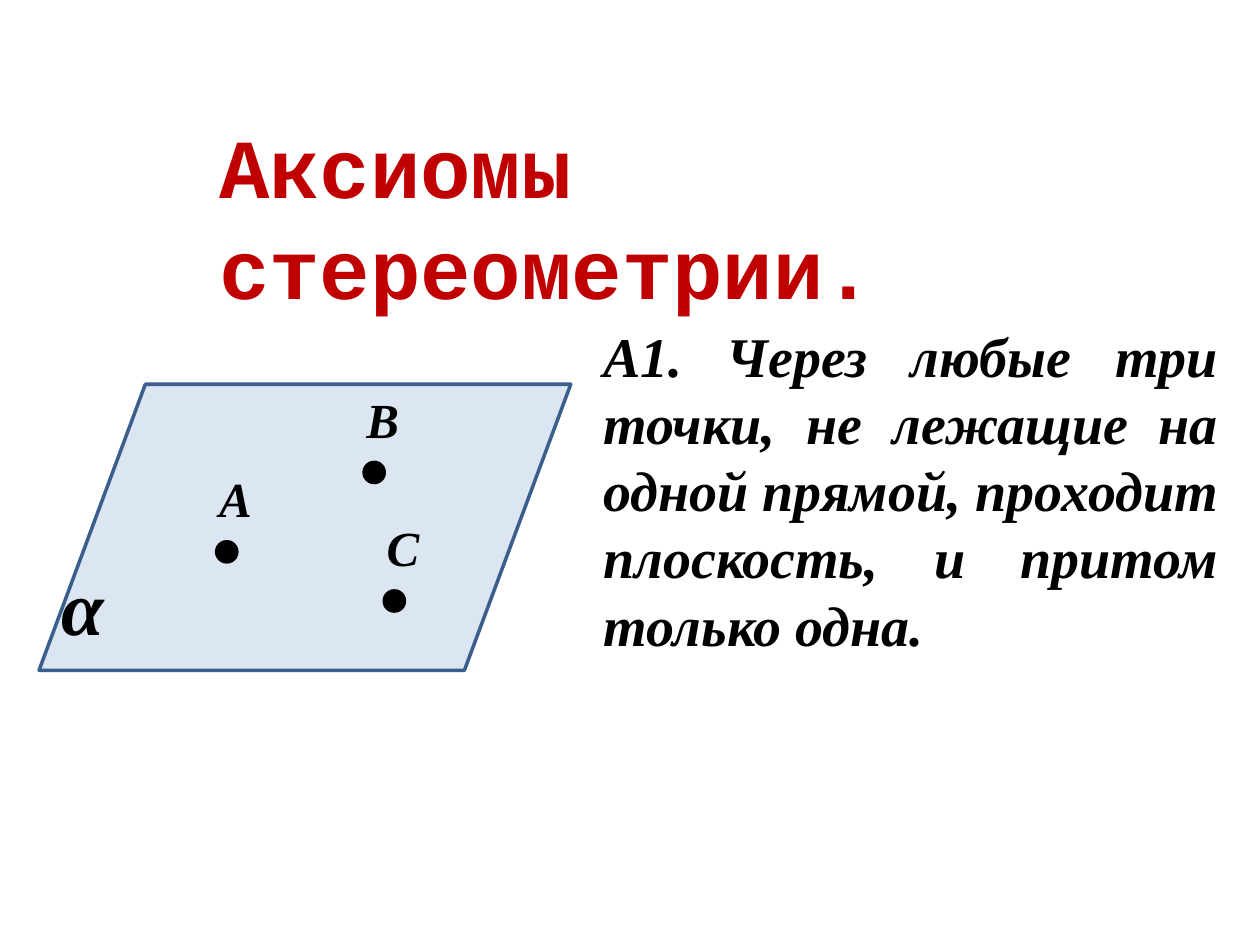
from pptx import Presentation
from pptx.dml.color import RGBColor
from pptx.enum.shapes import MSO_SHAPE
from pptx.enum.text import MSO_ANCHOR, MSO_AUTO_SIZE, PP_ALIGN
from pptx.util import Inches, Pt

WIDTH, HEIGHT = 10, 7.5
BLACK = "000000"
SERIF = {"name": "Times New Roman", "bold": True, "italic": True}
TITLE_FONT = {"name": "Courier New", "bold": True, "size": Pt(48)}
AXIOM_FONT = {**SERIF, "size": Pt(32)}
PLANE_FONT = {**SERIF, "size": Pt(44)}
POINT_FONT = {**SERIF, "size": Pt(28)}

POINT_SIZE = 0.16
LABEL_OFFSET = (-0.08, -0.63)
POINTS = {"А": (1.72, 4.3), "В": (2.89, 3.67), "С": (3.05, 4.69)}


def color(hex_value):
    return RGBColor.from_string(hex_value)


def box(left, top, width, height):
    return [Inches(length) for length in (left, top, width, height)]


def add_figure(slide, kind, bounds, fill, line):
    shape = slide.shapes.add_shape(kind, *box(*bounds))
    shape.shadow.inherit = False
    shape.fill.solid()
    shape.fill.fore_color.rgb = color(fill)
    shape.line.color.rgb = color(line)
    shape.line.width = Pt(2)


def add_text(slide, text, bounds, font, fill=BLACK, wrap=True, align=PP_ALIGN.LEFT):
    frame = slide.shapes.add_textbox(*box(*bounds)).text_frame
    frame_format = {
        "word_wrap": wrap,
        "auto_size": MSO_AUTO_SIZE.SHAPE_TO_FIT_TEXT,
        "vertical_anchor": MSO_ANCHOR.TOP,
    }
    for name, value in frame_format.items():
        setattr(frame, name, value)
    paragraph = frame.paragraphs[0]
    paragraph.alignment = align
    run = paragraph.add_run()
    run.text = text
    for name, value in font.items():
        setattr(run.font, name, value)
    run.font.color.rgb = color(fill)


def add_plane(slide):
    add_figure(slide, MSO_SHAPE.FLOWCHART_DATA, (0.31, 3.05, 4.22, 2.27),
               "DCE6F2", "3A5F8C")
    add_text(slide, "α", (0.39, 4.38, 0.59, 0.84), PLANE_FONT, wrap=False)


def add_point(slide, label, left, top):
    add_figure(slide, MSO_SHAPE.FLOWCHART_CONNECTOR,
               (left, top, POINT_SIZE, POINT_SIZE), BLACK, BLACK)
    shift_x, shift_y = LABEL_OFFSET
    add_text(slide, label, (left + shift_x, top + shift_y, 0.46, 0.57),
             POINT_FONT, wrap=False)


def main():
    presentation = Presentation()
    presentation.slide_width = Inches(WIDTH)
    presentation.slide_height = Inches(HEIGHT)
    slide = presentation.slides.add_slide(presentation.slide_layouts[6])

    add_plane(slide)
    add_text(slide, "Аксиомы стереометрии.", (1.64, 0.86, 6.56, 0.91),
             TITLE_FONT, fill="C00000")
    add_text(slide,
             "А1. Через любые три точки, не лежащие на одной прямой, "
             "проходит плоскость, и притом только одна.",
             (4.69, 2.5, 5.08, 2.79), AXIOM_FONT, align=PP_ALIGN.JUSTIFY)
    for label, (left, top) in POINTS.items():
        add_point(slide, label, left, top)

    presentation.save("out.pptx")


if __name__ == "__main__":
    main()
